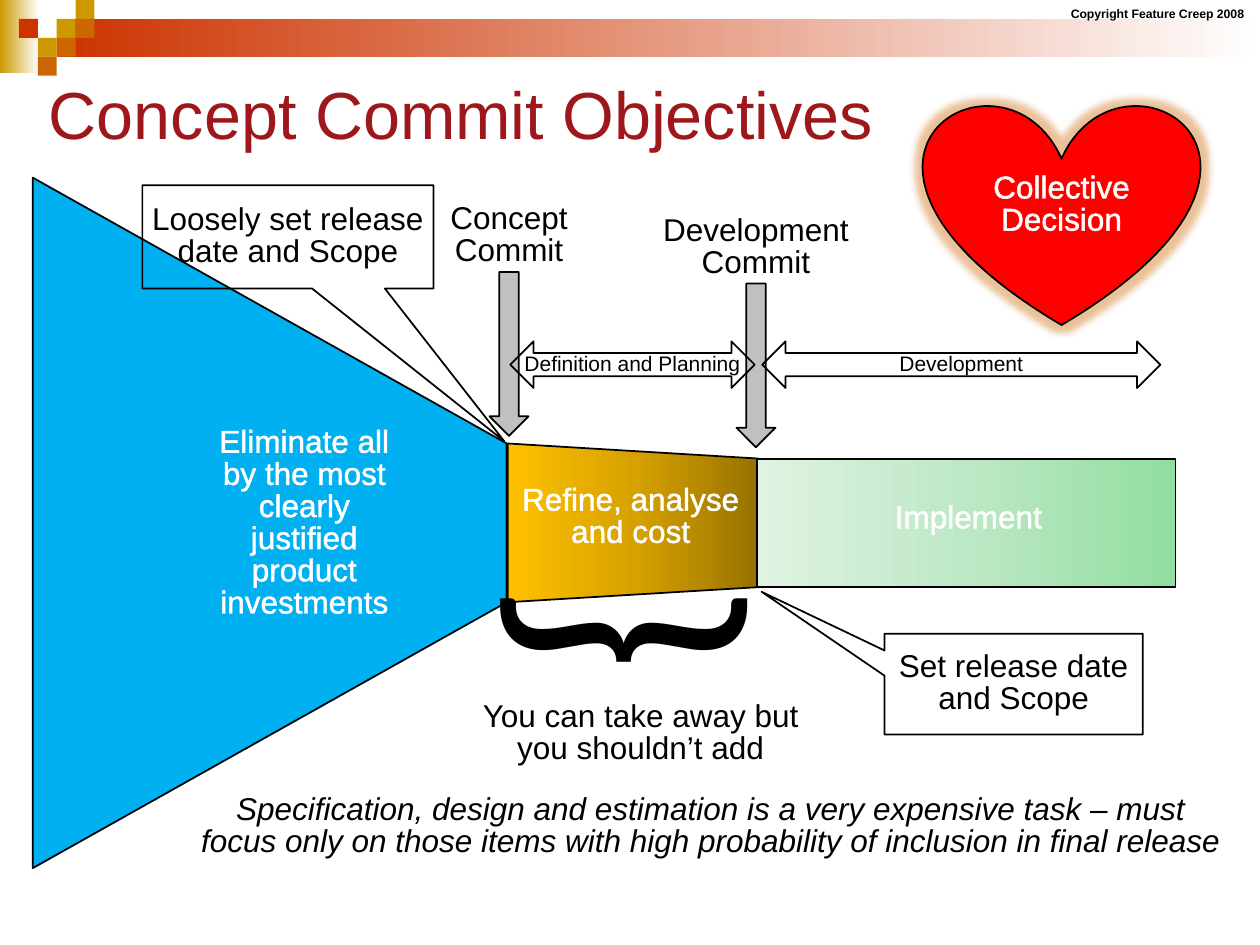
from copy import deepcopy

from lxml.etree import SubElement
from pptx import Presentation
from pptx.dml.color import RGBColor
from pptx.enum.shapes import MSO_SHAPE
from pptx.enum.text import MSO_ANCHOR, PP_ALIGN
from pptx.oxml.ns import qn
from pptx.util import Inches, Pt

BLACK = RGBColor(0x00, 0x00, 0x00)
WHITE = RGBColor(0xFF, 0xFF, 0xFF)
TITLE_RED = RGBColor(0x9E, 0x17, 0x1B)
GOLD = RGBColor(0xCC, 0x99, 0x00)
ORANGE = RGBColor(0xCC, 0x66, 0x00)
RUST = RGBColor(0xCC, 0x33, 0x00)
BLUE = RGBColor(0x00, 0xB0, 0xF0)
GRAY = RGBColor(0xC0, 0xC0, 0xC0)
RED = RGBColor(0xFF, 0x00, 0x00)
AMBERS = [RGBColor(0x97, 0x72, 0x00), RGBColor(0xD7, 0xA2, 0x00), RGBColor(0xFF, 0xC0, 0x00)]
GREENS = [RGBColor(0x91, 0xDE, 0xA0), RGBColor(0xBD, 0xE8, 0xC5), RGBColor(0xDF, 0xF3, 0xE3)]


def set_gradient(fill, colors, angle):
    """Spread the colours evenly along a linear gradient."""
    fill.gradient()
    fill.gradient_angle = angle
    stops = fill.gradient_stops
    if len(colors) == 3:
        first = stops[0]._gs
        first.addnext(deepcopy(first))
        stops = fill.gradient_stops
    for i, (stop, color) in enumerate(zip(stops, colors)):
        stop.color.rgb = color
        stop.position = i / (len(colors) - 1)


def outline_run(r, color, width):
    ln = r.font._element.makeelement(qn("a:ln"), {"w": str(Pt(width))})
    SubElement(SubElement(ln, qn("a:solidFill")), qn("a:srgbClr"), val=str(color))
    r.font._element.insert(0, ln)


def write(tf, text, size=18, color=BLACK, font="Arial", bold=False, italic=False,
          align=PP_ALIGN.CENTER, spacing=0.85, outlined=False):
    tf.text = text
    for p in tf.paragraphs:
        p.alignment = align
        p.line_spacing = spacing
        for r in p.runs:
            r.font.size = Pt(size)
            r.font.name = font
            r.font.bold = bold
            r.font.italic = italic
            r.font.color.rgb = color
            if outlined:
                outline_run(r, color, 1.45)


def add_text(s, box, text, wrap=True, anchor=MSO_ANCHOR.TOP, **style):
    sp = s.shapes.add_textbox(*map(Inches, box))
    sp.text_frame.word_wrap = wrap
    sp.text_frame.vertical_anchor = anchor
    write(sp.text_frame, text, **style)
    return sp


def add_shape(s, kind, box, fill=None, line=BLACK, adj=(), angle=270):
    """Fill may be None, one colour or a list of gradient colours."""
    sp = s.shapes.add_shape(kind, *map(Inches, box))
    sp.shadow.inherit = False
    for i, value in enumerate(adj):
        sp.adjustments[i] = value
    if fill is None:
        sp.fill.background()
    elif isinstance(fill, list):
        set_gradient(sp.fill, fill, angle)
    else:
        sp.fill.solid()
        sp.fill.fore_color.rgb = fill
    if line is None:
        sp.line.fill.background()
    else:
        sp.line.color.rgb = line
        sp.line.width = Pt(1)
    return sp


def add_label_shape(s, kind, box, text, fill=None, adj=(), **style):
    sp = add_shape(s, kind, box, fill, adj=adj)
    tf = sp.text_frame
    tf.margin_left = tf.margin_right = tf.margin_top = tf.margin_bottom = Inches(0.05)
    tf.word_wrap = False
    tf.vertical_anchor = MSO_ANCHOR.MIDDLE
    write(tf, text, **style)
    return sp


def add_header(s, left, top, width):
    # Fading bars
    add_shape(s, MSO_SHAPE.RECTANGLE, (left, top, 0.31, 0.58), [GOLD, WHITE], None, angle=0)
    add_shape(s, MSO_SHAPE.RECTANGLE, (left + 0.45, top + 0.15, width - 0.45, 0.3),
              [RUST, WHITE], None, angle=0)
    # Mosaic squares on a grid of (column, row)
    side = 0.15
    for col, row, color in [(3, 1, GOLD), (4, 0, GOLD), (4, 1, ORANGE), (2, 2, GOLD),
                            (1, 1, RUST), (3, 2, ORANGE), (2, 3, ORANGE)]:
        add_shape(s, MSO_SHAPE.RECTANGLE,
                  (left + col * side, top + row * side, side, side), color, None)
    # Copyright and title
    add_text(s, (left + width - 1.6, top, 1.6, 0.22), "Copyright Feature Creep 2008", wrap=False,
             size=7, bold=True, align=PP_ALIGN.LEFT, spacing=1.0)
    add_text(s, (left + 0.29, top + 0.31, 8.92, 1.17), "Concept Commit Objectives",
             anchor=MSO_ANCHOR.MIDDLE, size=38, color=TITLE_RED, align=PP_ALIGN.LEFT, spacing=1.0)


def add_stage(s, left, mid, width, height, fill, taper):
    """Trapezoid turned a quarter so that its narrow side faces right."""
    box = (left + (width - height) / 2, mid - width / 2, height, width)
    sp = add_shape(s, MSO_SHAPE.TRAPEZOID, box, fill, adj=[taper])
    sp.rotation = 90


def add_commit(s, center, top, width, text):
    """Milestone label with an arrow pointing down at the funnel."""
    add_shape(s, MSO_SHAPE.DOWN_ARROW, (center - 0.155, top + 0.59, 0.31, 1.3), GRAY, adj=[0.5, 0.5])
    add_text(s, (center - width / 2, top, width, 0.62), text)


def add_funnel(s, left, mid):
    # Funnel stages and milestones
    add_stage(s, left, mid, 3.76, 5.48, BLUE, 0.561)
    add_stage(s, left + 3.77, mid, 1.99, 1.26, AMBERS, 0.095)
    add_commit(s, 4.04, 1.57, 1.24, "Concept\vCommit")
    add_commit(s, 6.0, 1.66, 1.73, "Development\vCommit")
    add_stage(s, left + 5.75, mid, 3.32, 1.02, GREENS, 0)
    # Stage labels
    for box, text in [
        ((1.56, 3.34, 1.71, 1.65), "Eliminate all by the most clearly justified product investments"),
        ((3.99, 3.8, 2.03, 0.62), "Refine, analyse and cost"),
        ((6.83, 3.94, 1.71, 0.36), "Implement"),
    ]:
        add_text(s, box, text, color=WHITE, outlined=True)
    # Phase spans
    for x, width, text in [(4.05, 1.94, "Definition and Planning"), (6.05, 3.16, "Development")]:
        add_label_shape(s, MSO_SHAPE.LEFT_RIGHT_ARROW, (x, 2.71, width, 0.37), text,
                        adj=[0.5, 0.5], size=12)


def add_notes_below(s):
    # Brace under the refining stage
    brace = add_text(s, (4.71, 4, 0.54, 2.32), "{", size=155, font="Lato")
    brace.rotation = 270
    add_text(s, (3.67, 5.52, 2.83, 0.61), "You can take away but you shouldn’t add")
    add_text(s, (1.45, 6.26, 8.38, 0.62),
             "Specification, design and estimation is a very expensive task – must "
             "focus only on those items with high probability of inclusion in final release",
             italic=True)


def add_callouts(s):
    for box, text, tip in [
        ((7.02, 5.03, 2.05, 0.8), "Set release date\vand Scope", [-0.976, -0.916]),
        ((1.13, 1.47, 2.31, 0.82), "Loosely set release\vdate and Scope", [0.743, 1.976]),
    ]:
        add_label_shape(s, MSO_SHAPE.RECTANGULAR_CALLOUT, box, text, adj=tip)


def add_heart(s, box):
    sp = add_label_shape(s, MSO_SHAPE.HEART, box, "Collective\vDecision", RED,
                         color=WHITE, outlined=True)
    # Soft glow around the heart
    effects = sp._element.spPr.find(qn("a:effectLst"))
    glow = SubElement(effects, qn("a:glow"), rad=str(Pt(8)))
    color = SubElement(glow, qn("a:srgbClr"), val=str(ORANGE))
    SubElement(color, qn("a:alpha"), val="40000")


def main():
    prs = Presentation()
    prs.slide_width = Inches(10)
    prs.slide_height = Inches(7.5)
    s = prs.slides.add_slide(prs.slide_layouts[6])
    add_header(s, 0, 0, 10)
    add_funnel(s, 0.26, 4.15)
    add_notes_below(s)
    add_callouts(s)
    add_heart(s, (7.33, 0.82, 2.19, 1.76))
    prs.save("out.pptx")


if __name__ == "__main__":
    main()
